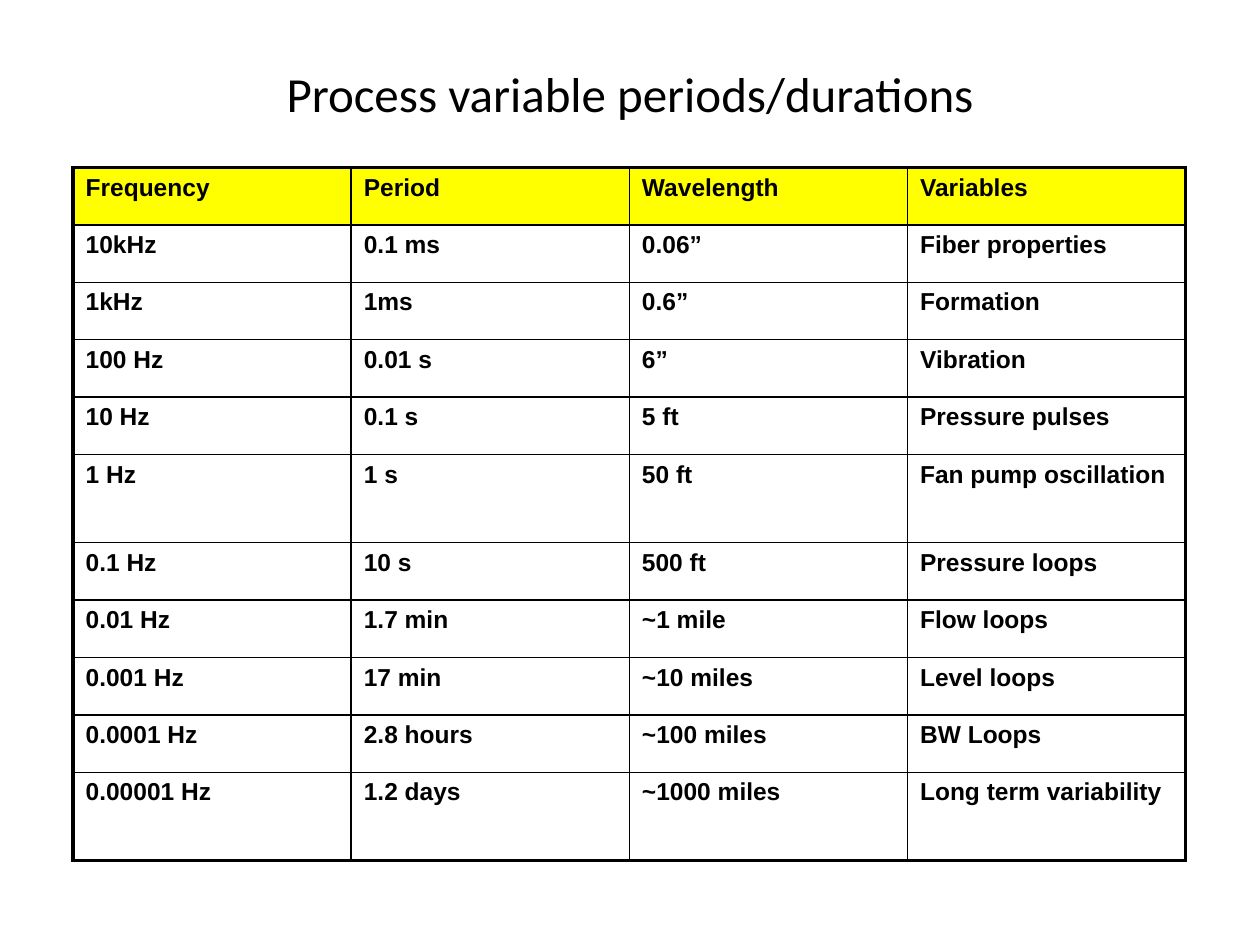
from lxml import etree
from pptx import Presentation
from pptx import util as u
from pptx.dml.color import RGBColor
from pptx.enum import text
from pptx.oxml import ns

COLORS = {"ink": "000000", "header": "FFFF00"}
THIN, THICK = 1, 2.25

ROWS = [
    ("Frequency", "Period", "Wavelength", "Variables"),
    ("10kHz", "0.1 ms", "0.06”", "Fiber properties"),
    ("1kHz", "1ms", "0.6”", "Formation"),
    ("100 Hz", "0.01 s", "6”", "Vibration"),
    ("10 Hz", "0.1 s", "5 ft", "Pressure pulses"),
    ("1 Hz", "1 s", "50 ft", "Fan pump oscillation"),
    ("0.1 Hz", "10 s", "500 ft", "Pressure loops"),
    ("0.01 Hz", "1.7 min", "~1 mile", "Flow loops"),
    ("0.001 Hz", "17 min", "~10 miles", "Level loops"),
    ("0.0001 Hz", "2.8 hours", "~100 miles", "BW Loops"),
    ("0.00001 Hz", "1.2 days", "~1000 miles", "Long term variability"),
]
TALL_ROWS = {5: 0.7, 10: 0.7}


class Deck:
    title_font = {"name": "Calibri", "size": u.Pt(28), "bold": False}
    cell_font = {"name": "Arial", "size": u.Pt(14), "bold": True}

    def __init__(self, prs):
        self.s = prs.slides.add_slide(prs.slide_layouts[6])

    def add_text(self, p, content, font):
        r = p.add_run()
        r.text = content
        for key, value in font.items():
            setattr(r.font, key, value)
        r.font.color.rgb = RGBColor.from_string(COLORS["ink"])

    def title(self, content, left, top, width, height):
        sp = self.s.shapes.add_textbox(*map(u.Inches, (left, top, width, height)))
        tf = sp.text_frame
        tf.word_wrap = True
        tf.vertical_anchor = text.MSO_ANCHOR.MIDDLE
        p = tf.paragraphs[0]
        p.alignment = text.PP_ALIGN.CENTER
        self.add_text(p, content, self.title_font)

    def borders(self, cell, widths):
        """Draw the sides L, R, T and B, in that order, with widths in points."""
        tc_pr = cell._tc.get_or_add_tcPr()
        for side, width in zip("LRTB", widths):
            ln = etree.SubElement(tc_pr, ns.qn(f"a:ln{side}"), w=str(u.Pt(width)))
            fill = etree.SubElement(ln, ns.qn("a:solidFill"))
            etree.SubElement(fill, ns.qn("a:srgbClr"), val=COLORS["ink"])

    def space_before(self, p, percent):
        spacing = etree.SubElement(p._p.get_or_add_pPr(), ns.qn("a:spcBef"))
        etree.SubElement(spacing, ns.qn("a:spcPct"), val=str(percent * 1000))

    def table(self, rows, tall_rows, left, top, width, height):
        """Rows not in tall_rows share the remaining height equally."""
        n_rows, n_cols = len(rows), len(rows[0])
        frame = self.s.shapes.add_table(
            n_rows, n_cols, *map(u.Inches, (left, top, width, height)))
        table = frame.table
        table.first_row = table.horz_banding = False
        row_height = (height - sum(tall_rows.values())) / (n_rows - len(tall_rows))
        for i, values in enumerate(rows):
            table.rows[i].height = u.Inches(tall_rows.get(i, row_height))
            for j, value in enumerate(values):
                cell = table.cell(i, j)
                outer = (j == 0, j == n_cols - 1, i == 0, i == n_rows - 1)
                self.borders(cell, [THICK if edge else THIN for edge in outer])
                if i == 0:
                    cell.fill.solid()
                    cell.fill.fore_color.rgb = RGBColor.from_string(COLORS["header"])
                else:
                    cell.fill.background()
                p = cell.text_frame.paragraphs[0]
                self.space_before(p, 20)
                self.add_text(p, value, self.cell_font)


def main():
    prs = Presentation()
    prs.slide_width, prs.slide_height = u.Inches(10), u.Inches(7.5)
    deck = Deck(prs)
    deck.title("Process variable periods/durations", 0.5, 0.3, 9, 0.87)
    deck.table(ROWS, TALL_ROWS, 0.58, 1.33, 8.83, 5.5)
    prs.save("out.pptx")


if __name__ == "__main__":
    main()
